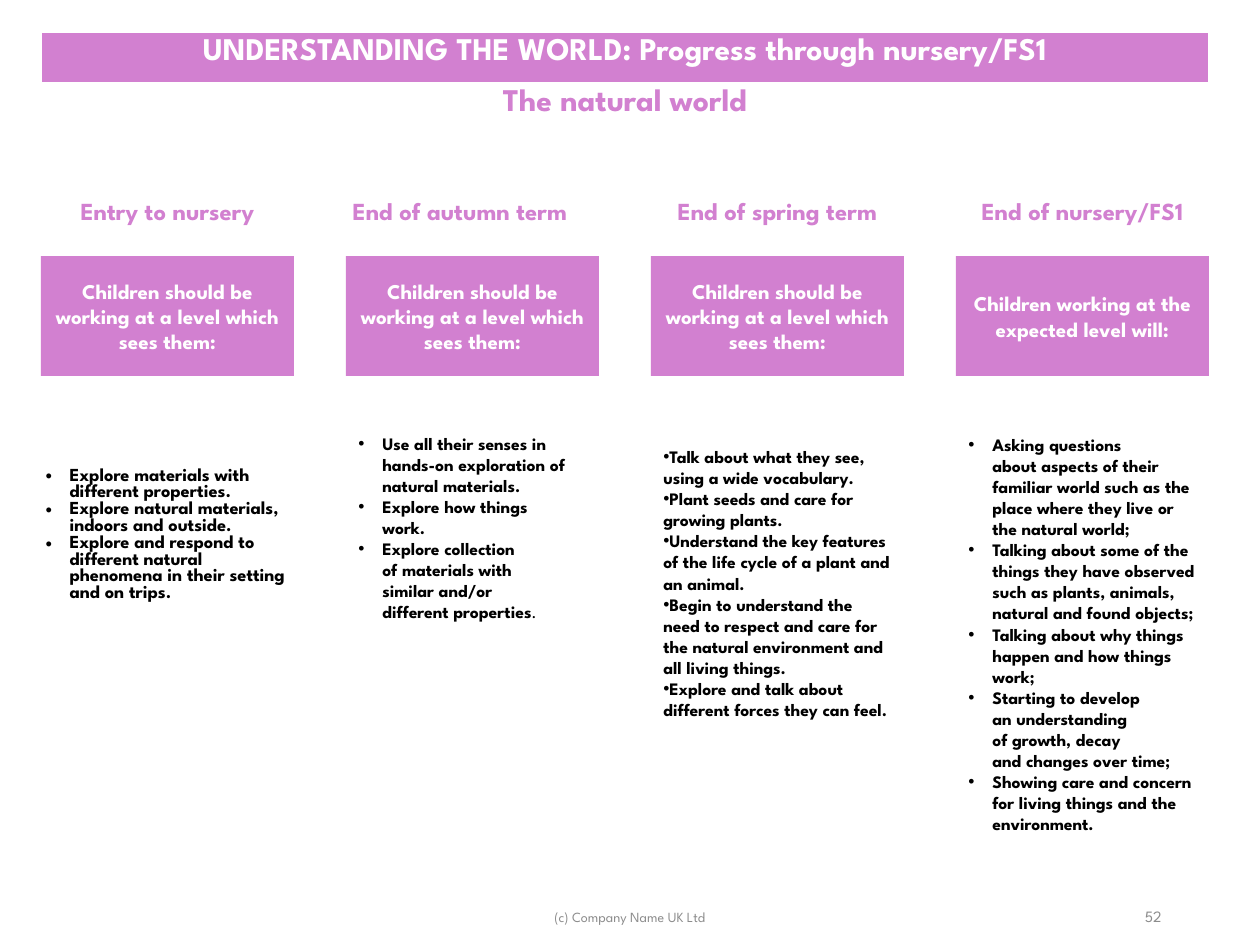
from lxml.etree import SubElement
from pptx import Presentation
from pptx.dml.color import RGBColor
from pptx.enum.shapes import MSO_SHAPE
from pptx.enum.text import MSO_ANCHOR, PP_ALIGN
from pptx.oxml.ns import qn
from pptx.util import Emu, Pt

COLORS = {"pink": "D280D0", "white": "FFFFFF", "black": "000000", "gray": "8C8C8C"}
FONT = "League Spartan"
LEFT, STEP, WIDTH = 41, 305, 253
HEADS = ["Entry to nursery", "End of autumn term", "End of spring term", "End of nursery/FS1"]
LEVEL = "Children should be working at a level which sees them:"
GOAL = "Children working at the expected level will:"
HARD = "~"
ENTRY = [
    "Explore materials with different properties.~",
    "Explore natural materials, indoors and outside.~",
    "Explore and respond to different natural phenomena in their setting and on trips.~",
]
AUTUMN = [
    "Use all their senses in hands-on exploration of natural~materials.~",
    "Explore how things work.",
    "Explore collection of~materials with similar~and/or different~properties",
]
SPRING = [
    "Talk about what they see, using a wide vocabulary.",
    "Plant seeds and care for growing plants.",
    "Understand the key features of the life cycle of a plant and an animal.",
    "Begin to understand the need to respect and care for the natural environment "
    "and all living things.",
    "Explore and talk about different forces they can feel.",
]
FINAL = [
    "Asking questions about~aspects of their familiar~world such as the place~where they "
    "live or the~natural world;",
    "Talking about some of~the things they have~observed such as~plants, animals, "
    "natural~and found objects;",
    "Talking about why~things happen and how~things work;~",
    "Starting to develop an~understanding of~growth, decay and~changes over time;",
    "Showing care and~concern for living things~and the environment.",
]


def px(n):
    """Turn px into EMU."""
    return Emu(round(n * 914400 / 126))


def tint(name):
    """Look up a colour."""
    return RGBColor.from_string(COLORS[name])


def add_run(para, words, size, color, bold):
    """Add one styled run, with hard spaces put in."""
    run = para.add_run()
    run.text = words.replace(HARD, chr(160))
    run.font.name, run.font.size, run.font.bold = FONT, Pt(size), bold
    run.font.color.rgb = tint(color)


def bullet(para, indent):
    """Give a paragraph a round bullet and a hanging indent."""
    props = para._p.get_or_add_pPr()
    props.set("marL", str(px(indent)))
    props.set("indent", str(-px(indent)))
    SubElement(props, qn("a:buFont"), typeface="Arial")
    SubElement(props, qn("a:buChar"), char="•")


def write(frame, lines, size=10, color="black", bold=True, align=PP_ALIGN.LEFT,
          indent=None, tail=""):
    """Fill a text frame; an indent makes the lines bullets."""
    frame.word_wrap = True
    for i, words in enumerate(lines):
        para = frame.add_paragraph() if i else frame.paragraphs[0]
        para.alignment = align
        if indent is not None:
            bullet(para, indent)
        add_run(para, words, size, color, bold)
    if tail:
        add_run(para, tail, size, color, False)


def add_text(slide, box, lines, anchor=MSO_ANCHOR.MIDDLE, drop=0, **style):
    """Add a text box, with its text area lowered by drop."""
    frame = slide.shapes.add_textbox(*map(px, box)).text_frame
    frame.vertical_anchor = anchor
    frame.margin_top += px(drop)
    write(frame, lines, **style)


def add_box(slide, box, words):
    """Add a filled box with a centred label."""
    shape = slide.shapes.add_shape(MSO_SHAPE.RECTANGLE, *map(px, box))
    shape.shadow.inherit = False
    shape.fill.solid()
    shape.fill.fore_color.rgb = tint("pink")
    shape.line.fill.background()
    shape.text_frame.vertical_anchor = MSO_ANCHOR.MIDDLE
    write(shape.text_frame, [words], size=12, color="white", align=PP_ALIGN.CENTER)


def add_grid(slide, box, rows, anchor=MSO_ANCHOR.TOP):
    """Add a one-column table from (lines, fill, style) rows."""
    table = slide.shapes.add_table(len(rows), 1, *map(px, box)).table
    for i, (lines, fill, style) in enumerate(rows):
        cell = table.cell(i, 0)
        cell.vertical_anchor = anchor
        cell.fill.solid()
        cell.fill.fore_color.rgb = tint(fill)
        write(cell.text_frame, lines, **style)


def main():
    """Build the slide."""
    deck = Presentation()
    deck.slide_width, deck.slide_height = px(1260), px(945)
    slide = deck.slides.add_slide(deck.slide_layouts[6])
    mid = {"align": PP_ALIGN.CENTER}
    add_grid(slide, (LEFT, 32, 1168, 102), [
        (["UNDERSTANDING THE WORLD: Progress through nursery/FS1"], "pink",
         {"size": 18, "color": "white", **mid}),
        (["The natural world"], "white", {"size": 18, "color": "pink", **mid}),
    ])
    cols = [LEFT + i * STEP for i in range(4)]
    for i, (x, head) in enumerate(zip(cols, HEADS)):
        extra = 25 if i == 1 else 0
        add_text(slide, (x - extra, 190, WIDTH + extra, 43), [head], MSO_ANCHOR.TOP,
                 size=14, color="pink", **mid)
        add_box(slide, (x, 256, WIDTH, 120), GOAL if i == 3 else LEVEL)
    add_grid(slide, (33, 397, 271, 277),
             [(ENTRY, "white", {"size": 10.5, "indent": 24})], MSO_ANCHOR.MIDDLE)
    add_text(slide, (cols[1], 427, 239, 204), AUTUMN, MSO_ANCHOR.TOP, indent=24, tail=".")
    add_text(slide, (cols[2], 256, WIDTH, 592), SPRING, drop=62, indent=0)
    add_text(slide, (cols[3], 399, WIDTH, 470), FINAL, indent=24)
    add_text(slide, (417, 892, 426, 50), ["(c) Company Name UK Ltd"], size=8,
             color="gray", bold=False, **mid)
    add_text(slide, (890, 891, 284, 50), ["52"], size=9, color="gray", bold=False,
             align=PP_ALIGN.RIGHT)
    deck.save("out.pptx")


if __name__ == "__main__":
    main()
